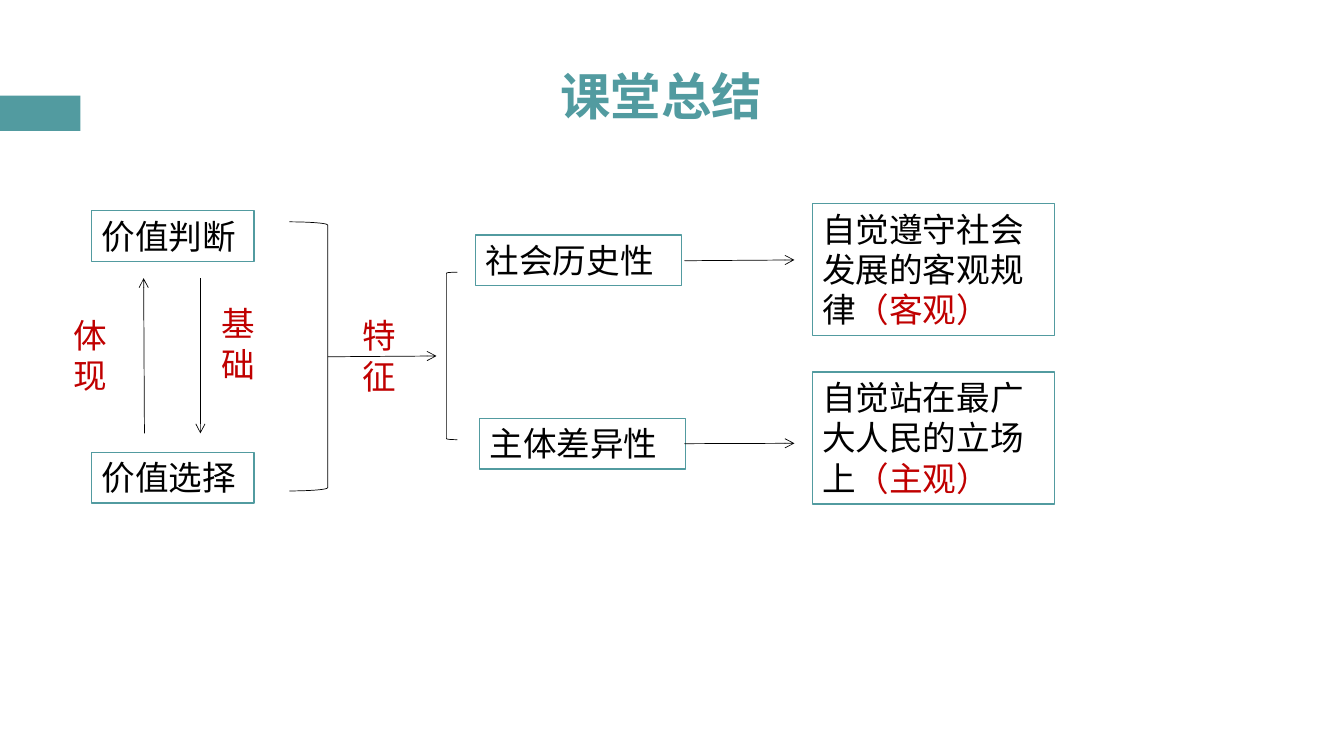
"""Build the lesson summary slide on value judgement and value choice."""
from dataclasses import dataclass

from lxml import etree
from pptx import Presentation
from pptx.dml.color import RGBColor
from pptx.enum.lang import MSO_LANGUAGE_ID
from pptx.enum.shapes import MSO_CONNECTOR, MSO_SHAPE
from pptx.enum.text import MSO_ANCHOR, MSO_AUTO_SIZE, PP_ALIGN
from pptx.oxml.ns import qn
from pptx.shapes.autoshape import Shape
from pptx.shapes.connector import Connector
from pptx.slide import Slide
from pptx.text.text import TextFrame
from pptx.util import Cm, Pt

RECTANGLE = MSO_SHAPE.RECTANGLE
LEFT_BRACKET = MSO_SHAPE.LEFT_BRACKET
STRAIGHT = MSO_CONNECTOR.STRAIGHT
LEFT, CENTER = PP_ALIGN.LEFT, PP_ALIGN.CENTER
TOP, MIDDLE = MSO_ANCHOR.TOP, MSO_ANCHOR.MIDDLE
FIXED, GROW = MSO_AUTO_SIZE.NONE, MSO_AUTO_SIZE.SHAPE_TO_FIT_TEXT
CHINESE = MSO_LANGUAGE_ID.SIMPLIFIED_CHINESE


@dataclass(frozen=True)
class Theme:
    teal: RGBColor = RGBColor(0x52, 0x9B, 0xA0)
    red: RGBColor = RGBColor(0xC0, 0x00, 0x00)
    black: RGBColor = RGBColor(0x00, 0x00, 0x00)
    white: RGBColor = RGBColor(0xFF, 0xFF, 0xFF)
    label_font: str = "Arial"
    concept_font: str = "Times New Roman"
    title_size: float = 36
    body_size: float = 24
    border: float = 1
    thin: float = 0.5


THEME = Theme()


@dataclass(frozen=True)
class Concept:
    text: str
    left: float
    top: float
    width: float
    height: float = 1.28
    emphasis: str = ""


@dataclass(frozen=True)
class Label:
    text: str
    left: float
    top: float


@dataclass(frozen=True)
class Arrow:
    x1: float
    y1: float
    x2: float
    y2: float


@dataclass(frozen=True)
class Bracket:
    left: float
    top: float
    width: float
    height: float
    rotation: float = 0


CONCEPTS = [
    Concept("价值判断", 2.31, 5.31, 4.09),
    Concept("价值选择", 2.31, 11.4, 4.09),
    Concept("社会历史性", 11.99, 5.92, 5.18),
    Concept("主体差异性", 12.09, 10.54, 5.18),
    Concept("自觉遵守社会发展的客观规律", 20.47, 5.13, 6.1, 3.33, "（客观）"),
    Concept("自觉站在最广大人民的立场上", 20.47, 9.37, 6.1, 3.33, "（主观）"),
]
LABELS = [
    Label("基础", 5.33, 7.52),
    Label("体现", 1.6, 7.8),
    Label("特征", 8.89, 7.82),
]
ARROWS = [
    Arrow(5.05, 7.01, 5.05, 10.92),
    Arrow(3.64, 10.92, 3.62, 7.01),
    Arrow(8.26, 8.99, 11, 8.97),
    Arrow(17.25, 6.57, 20.02, 6.55),
    Arrow(17.25, 11.18, 20.02, 11.17),
]
BRACKETS = [
    Bracket(7.29, 5.59, 0.97, 6.78, 180),
    Bracket(11.25, 6.86, 0.28, 4.22),
]


def write(frame: TextFrame, text: str, *, font: str, color: RGBColor,
          size: float = THEME.body_size, bold: bool = False,
          align: PP_ALIGN = LEFT, anchor: MSO_ANCHOR = TOP,
          auto_size: MSO_AUTO_SIZE = GROW, spacing: float = 1.0) -> None:
    frame.word_wrap = True
    frame.auto_size = auto_size
    frame.vertical_anchor = anchor
    paragraph = frame.paragraphs[0]
    paragraph.alignment = align
    paragraph.line_spacing = spacing
    run = paragraph.add_run()
    run.text = text
    run.font.name = font
    run.font.size = Pt(size)
    run.font.bold = bold
    run.font.color.rgb = color
    run.font.language_id = CHINESE


def add_title(slide: Slide, text: str) -> None:
    title = slide.shapes.title
    title.left, title.top, title.width, title.height = Cm(3.33), Cm(0.97), Cm(26.67), Cm(2.54)
    write(title.text_frame, text, font=THEME.label_font, color=THEME.teal,
          size=THEME.title_size, bold=True, align=CENTER, anchor=MIDDLE,
          auto_size=FIXED, spacing=1.2)


def add_rectangle(slide: Slide, left: float, top: float, width: float,
                  height: float, fill: RGBColor) -> Shape:
    rectangle = slide.shapes.add_shape(RECTANGLE, Cm(left), Cm(top), Cm(width), Cm(height))
    rectangle.shadow.inherit = False
    rectangle.fill.solid()
    rectangle.fill.fore_color.rgb = fill
    rectangle.line.fill.background()
    return rectangle


def add_concept(slide: Slide, concept: Concept) -> None:
    box = add_rectangle(slide, concept.left, concept.top, concept.width,
                        concept.height, THEME.white)
    box.line.color.rgb = THEME.teal
    box.line.width = Pt(THEME.border)
    write(box.text_frame, concept.text, font=THEME.concept_font, color=THEME.black)
    if concept.emphasis:
        write(box.text_frame, concept.emphasis, font=THEME.concept_font, color=THEME.red)


def add_label(slide: Slide, label: Label) -> None:
    box = slide.shapes.add_textbox(Cm(label.left), Cm(label.top), Cm(1.5), Cm(2.31))
    write(box.text_frame, label.text, font=THEME.label_font, color=THEME.red)


def draw_thin(outlined: Shape | Connector) -> None:
    outlined.line.color.rgb = THEME.black
    outlined.line.width = Pt(THEME.thin)


def add_arrow(slide: Slide, arrow: Arrow) -> None:
    connector = slide.shapes.add_connector(
        STRAIGHT, Cm(arrow.x1), Cm(arrow.y1), Cm(arrow.x2), Cm(arrow.y2))
    draw_thin(connector)
    etree.SubElement(connector.line._get_or_add_ln(), qn("a:tailEnd"), type="arrow")
    etree.SubElement(connector._element.spPr, qn("a:effectLst"))


def add_bracket(slide: Slide, bracket: Bracket) -> None:
    outline = slide.shapes.add_shape(LEFT_BRACKET, Cm(bracket.left), Cm(bracket.top),
                                     Cm(bracket.width), Cm(bracket.height))
    outline.rotation = bracket.rotation
    outline.shadow.inherit = False
    outline.fill.background()
    draw_thin(outline)


def main() -> None:
    presentation = Presentation()
    presentation.slide_width, presentation.slide_height = Cm(33.87), Cm(19.05)
    slide = presentation.slides.add_slide(presentation.slide_layouts.get_by_name("Title Only"))
    add_rectangle(slide, 0, 2.41, 2.03, 0.89, THEME.teal)
    add_title(slide, "课堂总结")
    for concept in CONCEPTS:
        add_concept(slide, concept)
    for label in LABELS:
        add_label(slide, label)
    for arrow in ARROWS:
        add_arrow(slide, arrow)
    for bracket in BRACKETS:
        add_bracket(slide, bracket)
    presentation.save("out.pptx")


if __name__ == "__main__":
    main()
